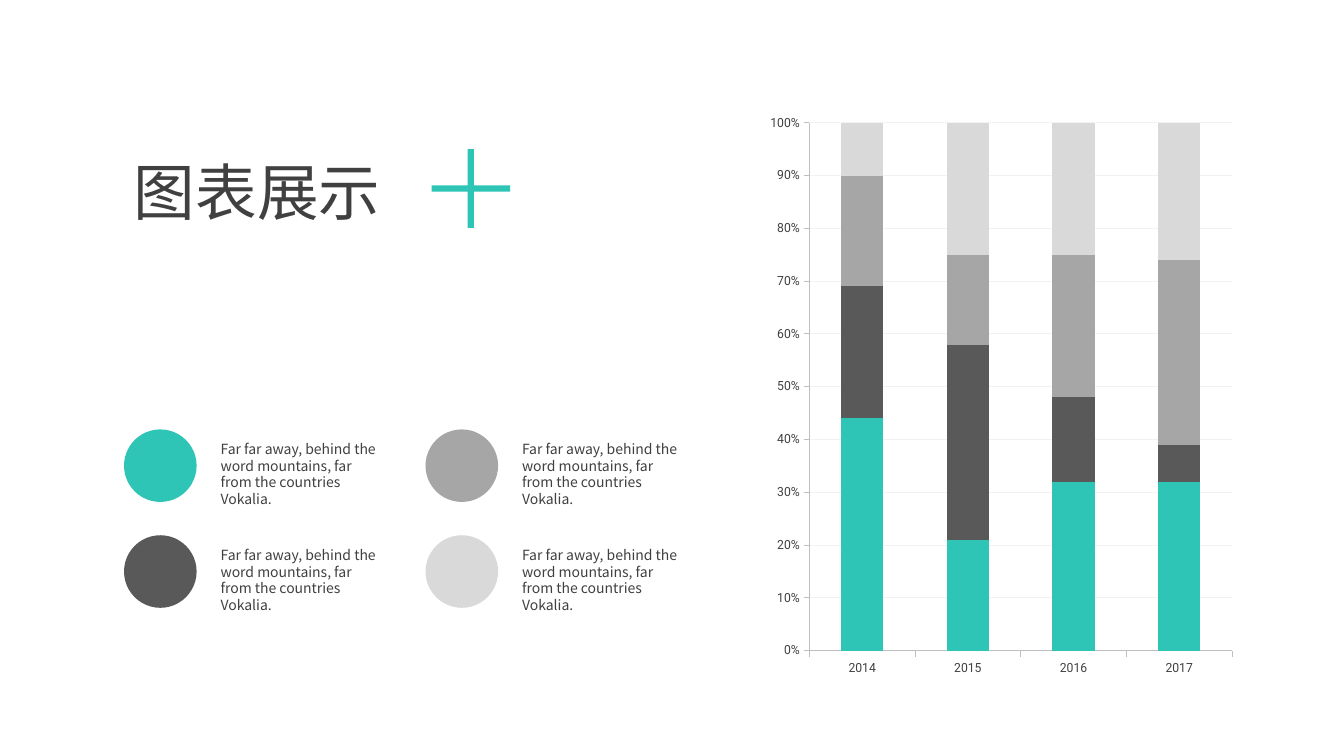
from dataclasses import dataclass

import pptx
import pptx.chart.data
import pptx.dml.color
import pptx.enum.chart
import pptx.enum.shapes
import pptx.enum.text
import pptx.oxml
import pptx.oxml.ns
import pptx.util

Inches = pptx.util.Inches
Pt = pptx.util.Pt
RGBColor = pptx.dml.color.RGBColor

TEAL = RGBColor(0x2E, 0xC4, 0xB6)
DARK_GREY = RGBColor(0x59, 0x59, 0x59)
MID_GREY = RGBColor(0xA6, 0xA6, 0xA6)
LIGHT_GREY = RGBColor(0xD9, 0xD9, 0xD9)
INK = RGBColor(0x40, 0x40, 0x40)
AXIS_GREY = RGBColor(0xBF, 0xBF, 0xBF)
GRID_GREY = RGBColor(0xF2, 0xF2, 0xF2)

TEXT_FONT = "Noto Sans CJK SC"
CHART_FONT = "Roboto"
BLURB = "Far far away, behind the word mountains, far from the countries Vokalia."
YEARS = ["2014", "2015", "2016", "2017"]


@dataclass(frozen=True)
class Category:
    name: str
    shares: tuple[int, ...]
    color: RGBColor


CATEGORIES = [
    Category("Series 1", (44, 21, 32, 32), TEAL),
    Category("Series 2", (25, 37, 16, 7), DARK_GREY),
    Category("Series 3", (21, 17, 27, 35), MID_GREY),
    Category("Series 4", (10, 25, 25, 26), LIGHT_GREY),
]


def apply_format(target, values: dict) -> None:
    for name, value in values.items():
        setattr(target, name, value)


def set_font(font, size: float, family: str) -> None:
    apply_format(font, {"size": Pt(size), "name": family})
    font.color.rgb = INK


def set_line(line, color: RGBColor) -> None:
    line.color.rgb = color
    line.width = Pt(0.75)


def add_text(slide, box: tuple[float, ...], words: str, size: float,
             spacing: float, right_inset: float = 0.1) -> None:
    frame = slide.shapes.add_textbox(*map(Inches, box)).text_frame
    apply_format(frame, {
        "word_wrap": True,
        "auto_size": pptx.enum.text.MSO_AUTO_SIZE.SHAPE_TO_FIT_TEXT,
        "margin_right": Inches(right_inset),
    })
    paragraph = frame.paragraphs[0]
    paragraph.line_spacing = Pt(spacing)
    run = paragraph.add_run()
    run.text = words
    set_font(run.font, size, TEXT_FONT)
    # The East Asian typeface carries the Chinese heading
    east_asian = run.font._element.makeelement(
        pptx.oxml.ns.qn("a:ea"), {"typeface": TEXT_FONT})
    run.font._element.append(east_asian)


def add_mark(slide, kind, left: float, top: float, size: float, color: RGBColor):
    mark = slide.shapes.add_shape(
        kind, Inches(left), Inches(top), Inches(size), Inches(size))
    mark.shadow.inherit = False
    mark.fill.solid()
    mark.fill.fore_color.rgb = color
    mark.line.fill.background()
    return mark


def set_plot_layout(chart, x: float, y: float, w: float, h: float) -> None:
    places = "".join(
        f'<c:{tag} val="{value}"/>'
        for tag, value in (("xMode", "edge"), ("yMode", "edge"),
                           ("x", x), ("y", y), ("w", w), ("h", h)))
    layout = pptx.oxml.parse_xml(
        f'<c:layout {pptx.oxml.ns.nsdecls("c")}><c:manualLayout>'
        f'<c:layoutTarget val="inner"/>{places}</c:manualLayout></c:layout>')
    plot_area = chart._chartSpace.chart.plotArea
    for old in plot_area.findall(pptx.oxml.ns.qn("c:layout")):
        plot_area.remove(old)
    plot_area.insert(0, layout)


def add_share_chart(slide) -> None:
    shares = pptx.chart.data.CategoryChartData()
    shares.categories = YEARS
    for category in CATEGORIES:
        shares.add_series(category.name, category.shares)
    chart = slide.shapes.add_chart(
        pptx.enum.chart.XL_CHART_TYPE.COLUMN_STACKED_100,
        Inches(7.64), Inches(0.84), Inches(4.67), Inches(6.31), shares).chart
    apply_format(chart, {"has_legend": False, "has_title": False})
    set_font(chart.font, 9, CHART_FONT)
    set_plot_layout(chart, 0.05, 0.06, 0.93, 0.83)

    # Columns
    plot = chart.plots[0]
    apply_format(plot, {"gap_width": 150, "overlap": 100, "vary_by_categories": False})
    for series, category in zip(plot.series, CATEGORIES):
        series.format.fill.solid()
        series.format.fill.fore_color.rgb = category.color

    # Axes and grid
    for axis in (chart.category_axis, chart.value_axis):
        apply_format(axis, {
            "major_tick_mark": pptx.enum.chart.XL_TICK_MARK.OUTSIDE,
            "minor_tick_mark": pptx.enum.chart.XL_TICK_MARK.NONE,
        })
        set_font(axis.tick_labels.font, 9, CHART_FONT)
        set_line(axis.format.line, AXIS_GREY)
    share_axis = chart.value_axis
    apply_format(share_axis, {
        "minimum_scale": 0, "maximum_scale": 1, "major_unit": 0.1,
        "has_major_gridlines": True,
    })
    apply_format(share_axis.tick_labels,
                 {"number_format": "0%", "number_format_is_linked": False})
    set_line(share_axis.major_gridlines.format.line, GRID_GREY)


def add_legend(slide) -> None:
    for index, category in enumerate(CATEGORIES):
        column, row = divmod(index, 2)
        left, top = 1.23 + 2.99 * column, 4.26 + 1.05 * row
        add_text(slide, (left + 0.86, top + 0.06, 1.83, 0.61), BLURB, 10, 12)
        add_mark(slide, pptx.enum.shapes.MSO_SHAPE.OVAL, left, top, 0.72, category.color)


def main() -> None:
    deck = pptx.Presentation()
    apply_format(deck, {"slide_width": Inches(13.33), "slide_height": Inches(7.5)})
    slide = deck.slides.add_slide(deck.slide_layouts[6])

    add_share_chart(slide)

    # Heading, with room to stay on one line, and its plus sign
    add_text(slide, (1.23, 1.49, 2.64, 0.88), "图表展示", 44, 52, right_inset=0)
    plus = add_mark(slide, pptx.enum.shapes.MSO_SHAPE.CROSS, 4.28, 1.48, 0.78, TEAL)
    plus.adjustments[0] = 0.46

    add_legend(slide)
    deck.save("out.pptx")


if __name__ == "__main__":
    main()
